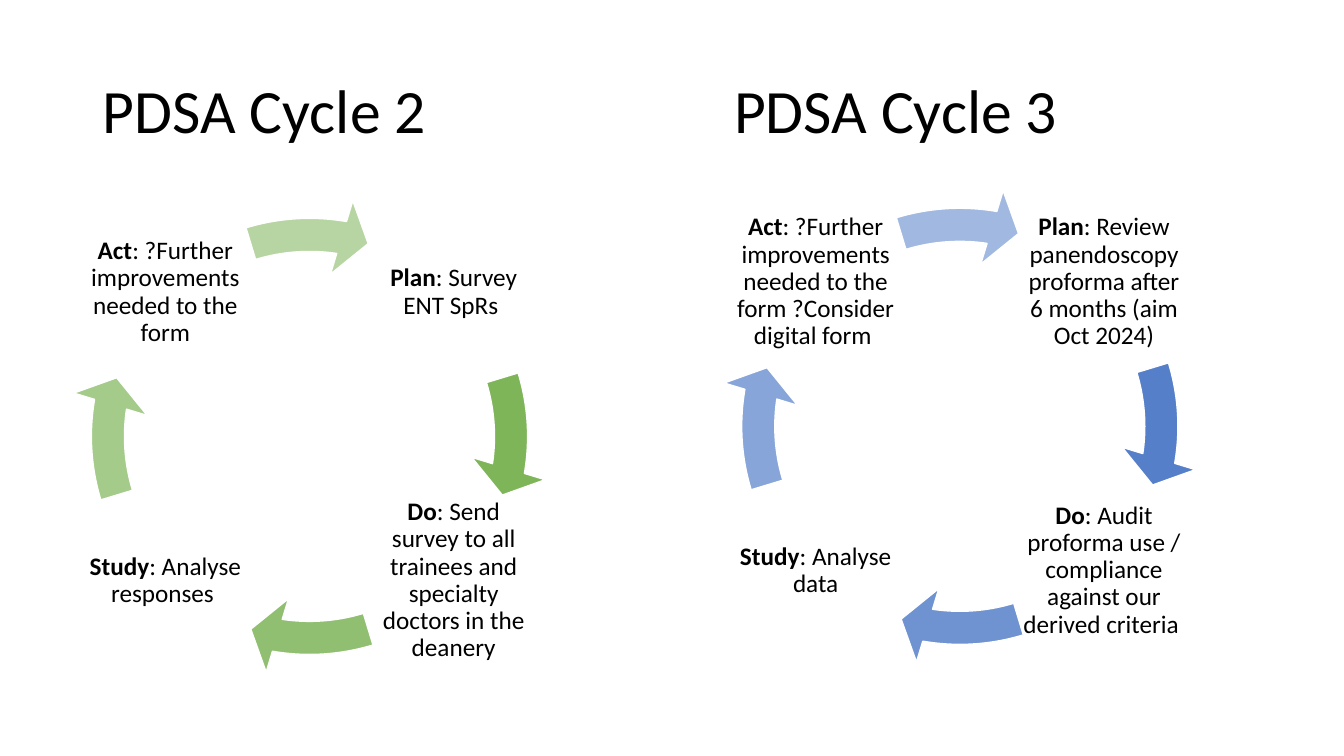
"""Build a slide showing two PDSA cycles as rings of text and curved arrows."""
from lxml.etree import SubElement
from pptx import Presentation
from pptx.dml.color import RGBColor
from pptx.enum.shapes import MSO_SHAPE
from pptx.enum.text import MSO_ANCHOR, MSO_AUTO_SIZE, PP_ALIGN
from pptx.oxml.ns import qn
from pptx.util import Emu, Pt

PX = 9144
BLACK = RGBColor(0x00, 0x00, 0x00)
WHITE = RGBColor(0xFF, 0xFF, 0xFF)
GREEN = RGBColor(0x70, 0xAD, 0x47)
BLUE = RGBColor(0x44, 0x72, 0xC4)

RING, STAGE, INSET, FAR = 476, 168, 11, 297
QUARTER_TURN, FULL_TURN = 54, 216
STAGE_OFFSETS = [(FAR, INSET), (FAR, FAR), (INSET, FAR), (INSET, INSET)]
ARROW_OPACITIES = [90, 77, 63, 50]
SECOND_TITLE_TAB = 626

TITLES = "PDSA Cycle 2\tPDSA Cycle 3"
CYCLES = [
    (69, 195, GREEN, [
        ("Plan", ": Survey ENT SpRs "),
        ("Do", ": Send survey to all trainees and specialty doctors in the deanery"),
        ("Study", ": Analyse responses "),
        ("Act", ": ?Further improvements needed to the form"),
    ]),
    (714, 185, BLUE, [
        ("Plan", ": Review panendoscopy proforma after 6 months (aim Oct 2024)"),
        ("Do", ": Audit proforma use / compliance against our derived criteria "),
        ("Study", ": Analyse data"),
        ("Act", ": ?Further improvements needed to the form ?Consider digital form "),
    ]),
]

STAGE_FRAME = {
    "word_wrap": True,
    "vertical_anchor": MSO_ANCHOR.MIDDLE,
    **{f"margin_{side}": Emu(3 * PX) for side in ("left", "top", "right", "bottom")},
}
TITLE_FRAME = {
    "word_wrap": True,
    "auto_size": MSO_AUTO_SIZE.NONE,
    "vertical_anchor": MSO_ANCHOR.MIDDLE,
}


def px(*lengths):
    """Turn px lengths into EMU."""
    return [Emu(length * PX) for length in lengths]


def apply(target, values):
    """Set each named attribute on the target."""
    for name, value in values.items():
        setattr(target, name, value)


def add_span(para, text, size, bold=False):
    """Add one run of black Calibri text."""
    span = para.add_run()
    span.text = text
    apply(span.font, {"name": "Calibri", "size": Pt(size), "bold": bold})
    span.font.color.rgb = BLACK


def add_title(page):
    """Place both cycle titles in the title placeholder, parted by a tab stop."""
    title = page.shapes.title
    apply(title, dict(zip(("left", "top", "width", "height"), px(92, 40, 1150, 145))))
    apply(title.text_frame, TITLE_FRAME)
    para = title.text_frame.paragraphs[0]
    apply(para, {"alignment": PP_ALIGN.LEFT, "line_spacing": 0.9})
    tabs = SubElement(para._p.get_or_add_pPr(), qn("a:tabLst"))
    SubElement(tabs, qn("a:tab"), pos=str(SECOND_TITLE_TAB * PX), algn="l")
    add_span(para, TITLES, 44)


def add_stage(group, left, top, name, detail):
    """Add the text of one stage, with its name in bold."""
    box = group.shapes.add_textbox(*px(left, top, STAGE, STAGE))
    apply(box.text_frame, STAGE_FRAME)
    para = box.text_frame.paragraphs[0]
    apply(para, {"alignment": PP_ALIGN.CENTER, "line_spacing": 0.9})
    add_span(para, name, 18, bold=True)
    add_span(para, detail, 18)


def add_arrow(group, left, top, color, turn, opacity):
    """Add the curved arrow that leaves the stage at this quarter turn."""
    arrow = group.shapes.add_shape(
        MSO_SHAPE.CIRCULAR_ARROW, *px(left, top, RING, RING))
    arrow.shadow.inherit = False
    angle = turn * QUARTER_TURN
    bends = [0.069, 4.651, 5.504 + angle, (205.845 + angle) % FULL_TURN, 0.08]
    for index, bend in enumerate(bends):
        arrow.adjustments[index] = bend
    arrow.fill.solid()
    arrow.fill.fore_color.rgb = color
    tint = arrow._element.spPr.find(qn("a:solidFill"))[0]
    SubElement(tint, qn("a:alpha"), val=str(opacity * 1000))
    arrow.line.color.rgb = WHITE
    arrow.line.width = Pt(1)


def add_cycle(page, left, top, color, stages):
    """Add one group of four stages and the arrows between them."""
    group = page.shapes.add_group_shape()
    rows = zip(stages, STAGE_OFFSETS, ARROW_OPACITIES)
    for turn, ((name, detail), (across, down), opacity) in enumerate(rows):
        add_stage(group, left + across, top + down, name, detail)
        add_arrow(group, left, top, color, turn, opacity)


def main():
    """Build the deck and save it."""
    deck = Presentation()
    deck.slide_width, deck.slide_height = px(1333, 750)
    page = deck.slides.add_slide(deck.slide_layouts[5])
    add_title(page)
    for cycle in CYCLES:
        add_cycle(page, *cycle)
    deck.save("out.pptx")


if __name__ == "__main__":
    main()
